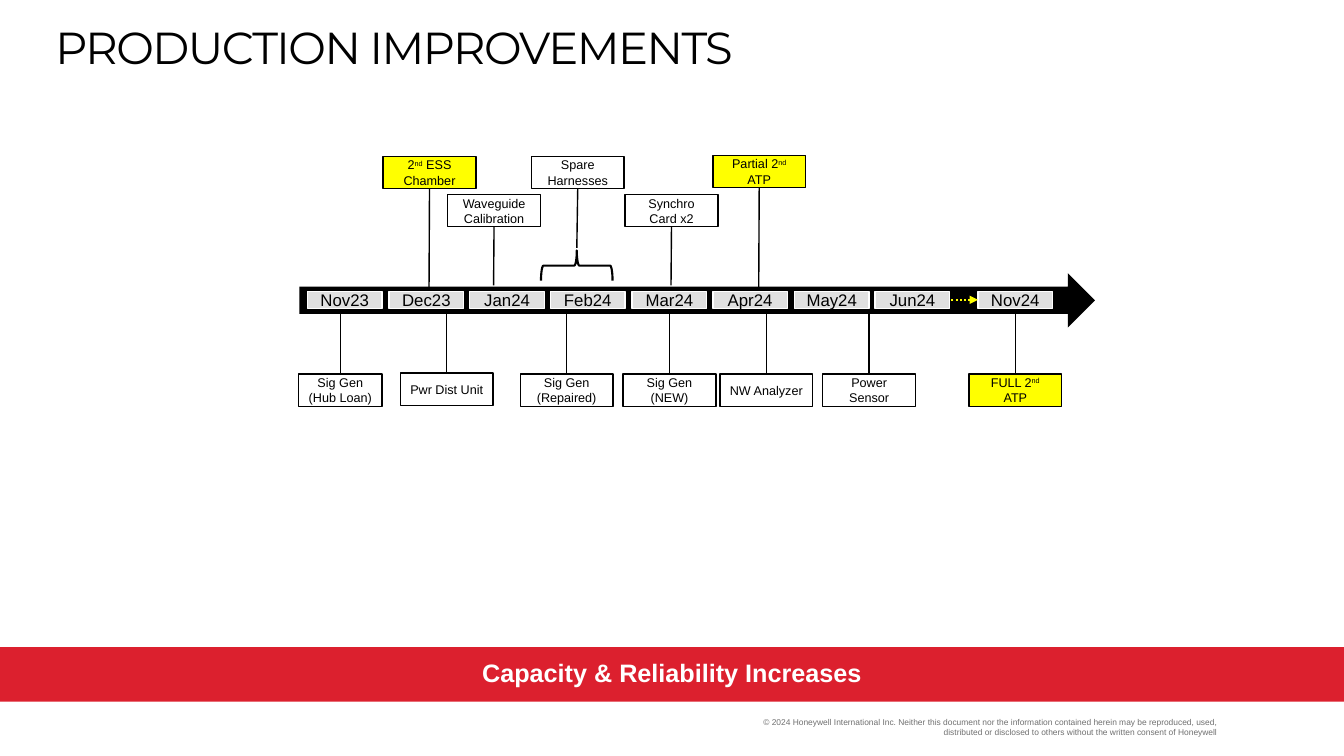
import pptx
import pptx.dml.color
import pptx.enum.dml
import pptx.enum.shapes
import pptx.enum.text
import pptx.oxml.ns
import pptx.util
from lxml import etree

SHAPE = pptx.enum.shapes.MSO_SHAPE
ALIGN = pptx.enum.text.PP_ALIGN
ANCHOR = pptx.enum.text.MSO_ANCHOR
BLACK, WHITE, GREY, YELLOW = "000000", "FFFFFF", "E0E0E0", "FFFF00"
RED, FOOTER_GREY = "DC202E", "707070"


def px(length):
    """Turn px (100 to the inch) into EMU."""
    return pptx.util.Emu(length * 9144)


def color(hex_string):
    return pptx.dml.color.RGBColor.from_string(hex_string)


def add_element(parent, tag, **attributes):
    return etree.SubElement(parent, pptx.oxml.ns.qn(tag), attributes)


class TimelineSlide:
    font_name = "Arial"

    def __init__(self, deck):
        self.page = deck.slides.add_slide(deck.slide_layouts[6])

    def fill_text(self, box, text, size, ink=BLACK, bold=None, font=None, align=ALIGN.CENTER,
                  anchor=ANCHOR.MIDDLE, insets=(10, 5), wrap=True, line_spacing=None,
                  tracking=None):
        """Fill a box with one paragraph; parts between ^ marks are superscript."""
        frame = box.text_frame
        frame.word_wrap = wrap
        frame.vertical_anchor = anchor
        frame.margin_left = frame.margin_right = px(insets[0])
        frame.margin_top = frame.margin_bottom = px(insets[1])
        para = frame.paragraphs[0]
        para.alignment = align
        if line_spacing:
            para.line_spacing = line_spacing
        for index, part in enumerate(text.split("^")):
            span = para.add_run()
            span.text = part
            span.font.name = font or self.font_name
            span.font.size = pptx.util.Pt(size)
            span.font.bold = bold
            span.font.color.rgb = color(ink)
            properties = span._r.get_or_add_rPr()
            if index % 2:
                properties.set("baseline", "30000")
            if tracking:
                properties.set("spc", str(tracking))

    def text(self, place, text, size, **style):
        box = self.page.shapes.add_textbox(*map(px, place))
        self.fill_text(box, text, size, **style)

    def shape(self, kind, place, fill=None, line=None, weight=1):
        box = self.page.shapes.add_shape(kind, *map(px, place))
        box.shadow.inherit = False
        if fill:
            box.fill.solid()
            box.fill.fore_color.rgb = color(fill)
        else:
            box.fill.background()
        if line:
            box.line.color.rgb = color(line)
            box.line.width = pptx.util.Pt(weight)
        else:
            box.line.fill.background()
        return box

    def month(self, left, label):
        box = self.shape(SHAPE.RECTANGLE, (left, 289, 74, 17), GREY, WHITE)
        self.fill_text(box, label, 12)
        return box

    def callout(self, left, top, width, text, fill, leader):
        """Add a framed label; leader is its line as y1, x1, y2, x2 in parts of the box."""
        box = self.shape(SHAPE.LINE_CALLOUT_1, (left, top, width, 32), fill, BLACK)
        for index, value in enumerate(leader):
            box.adjustments[index] = value
        self.fill_text(box, text, 9, insets=(9, 5))

    def dotted_arrow(self, start, end):
        """Join the left side of start to the right side of end, with the head at start."""
        link = self.page.shapes.add_connector(
            pptx.enum.shapes.MSO_CONNECTOR.STRAIGHT, 0, 0, 0, 0)
        link.begin_connect(start, 1)
        link.end_connect(end, 3)
        link.line.color.rgb = color(YELLOW)
        link.line.width = pptx.util.Pt(1.5)
        link.line.dash_style = pptx.enum.dml.MSO_LINE.ROUND_DOT
        add_element(link.line._get_or_add_ln(), "a:headEnd", type="triangle")
        add_element(link._element.spPr, "a:effectLst")


MONTHS = ["Nov23", "Dec23", "Jan24", "Feb24", "Mar24", "Apr24", "May24", "Jun24"]

# left, top, text, fill, leader end as y and x
UPPER_CALLOUTS = [
    (620, 193, "Synchro Card x2", WHITE, 2.82, 0.495),
    (527, 155, "Spare Harnesses", WHITE, 2.84, 0.49),
    (380, 155, "2^nd^ ESS Chamber", YELLOW, 4.08, 0.495),
    (444, 193, "Waveguide Calibration", WHITE, 2.82, 0.495),
    (707, 154, "Partial 2^nd^ ATP", YELLOW, 4.08, 0.495),
]

# left, top, width, text, fill
LOWER_CALLOUTS = [
    (296, 371, 83, "Sig Gen (Hub Loan)", WHITE),
    (397, 370, 92, "Pwr Dist Unit", WHITE),
    (516, 371, 92, "Sig Gen (Repaired)", WHITE),
    (618, 371, 92, "Sig Gen (NEW)", WHITE),
    (714, 371, 92, "NW Analyzer", WHITE),
    (816, 371, 92, "Power Sensor", WHITE),
    (961, 371, 92, "FULL 2^nd^ ATP", YELLOW),
]


def main():
    deck = pptx.Presentation()
    deck.slide_width, deck.slide_height = px(1333), px(750)
    slide = TimelineSlide(deck)

    slide.text((757, 707, 450, 24),
               "© 2024 Honeywell International Inc. Neither this document nor the information "
               "contained herein may be reproduced, used, distributed or disclosed to others "
               "without the written consent of Honeywell",
               6, ink=FOOTER_GREY, align=ALIGN.RIGHT, anchor=ANCHOR.BOTTOM,
               insets=(0, 0), wrap=False)
    banner = slide.shape(SHAPE.RECTANGLE, (0, 642, 1333, 54), RED)
    slide.fill_text(banner, "Capacity & Reliability Increases", 18, ink=WHITE, bold=True,
                    insets=(54, 5), line_spacing=0.9)

    slide.shape(SHAPE.RIGHT_ARROW, (297, 271, 789, 54), BLACK)
    for index, label in enumerate(MONTHS):
        last_month = slide.month(round(305.2 + 80.4 * index), label)
    target_month = slide.month(970, "Nov24")

    for left, top, text, fill, end_y, end_x in UPPER_CALLOUTS:
        slide.callout(left, top, 92, text, fill, (1.01, 0.5, end_y, end_x))
    for left, top, width, text, fill in LOWER_CALLOUTS:
        slide.callout(left, top, width, text, fill, (0.01, 0.5, -1.88, 0.5))

    brace = slide.shape(SHAPE.LEFT_BRACE, (557, 228, 30, 71), line=BLACK, weight=1.5)
    brace.rotation = 90
    slide.dotted_arrow(target_month, last_month)

    slide.text((45, 25, 1246, 46), "PRODUCTION IMPROVEMENTS", 32, font="Montserrat",
               align=ALIGN.LEFT, anchor=ANCHOR.TOP, line_spacing=0.8, tracking=-110)
    deck.save("out.pptx")


if __name__ == "__main__":
    main()
